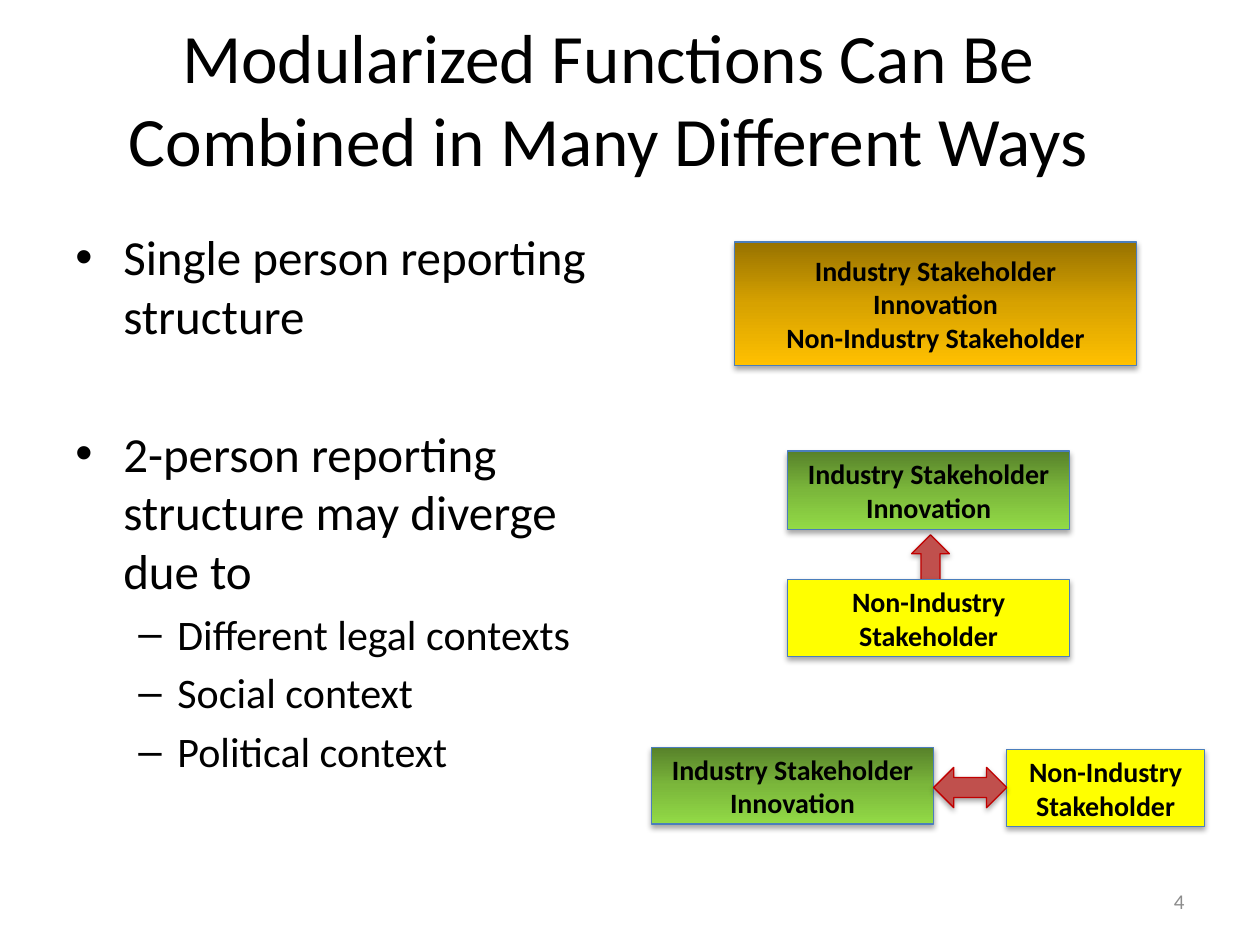
from pptx import Presentation
from pptx.dml.color import RGBColor
from pptx.enum.shapes import MSO_SHAPE as SHAPE
from pptx.enum.text import MSO_ANCHOR as ANCHOR, PP_ALIGN as ALIGN
from pptx.oxml import parse_xml
from pptx.oxml.ns import nsdecls, qn
from pptx.util import Pt

PX = 9144  # 100 px to the inch
FONT = "Calibri"
GOLD = ("977200", "D7A200", "FFC000")
GREEN = ("57812A", "7BB73B", "92DA46")
YELLOW = "FFFF00"
INDUSTRY = "Industry Stakeholder\nInnovation"
NON_INDUSTRY = "Non-Industry Stakeholder"


def color(value):
    return RGBColor.from_string(value)


def emu(*lengths):
    return [n * PX for n in lengths]


def style(p, size, ink="000000", bold=False, align=ALIGN.LEFT):
    p.alignment = align
    for r in p.runs:
        r.font.name, r.font.size, r.font.bold = FONT, Pt(size), bold
        r.font.color.rgb = color(ink)


def add_text(s, box, text, size, ink="000000", align=ALIGN.LEFT, anchor=ANCHOR.MIDDLE):
    tf = s.shapes.add_textbox(*emu(*box)).text_frame
    tf.word_wrap = True
    tf.vertical_anchor = anchor
    tf.text = text
    for p in tf.paragraphs:
        style(p, size, ink, align=align)
    return tf


def set_bullet(p, char, left, hang):
    pPr = p._p.get_or_add_pPr()
    pPr.set("marL", str(left * PX))
    pPr.set("indent", str(-hang * PX))
    pPr.append(parse_xml(f'<a:buFont {nsdecls("a")} typeface="Arial"/>'))
    pPr.append(parse_xml(f'<a:buChar {nsdecls("a")} char="{char}"/>'))


def set_gradient(sp, stops):
    gs = "".join(f'<a:gs pos="{i * 50000}"><a:srgbClr val="{c}"/></a:gs>'
                 for i, c in enumerate(stops))
    sp._element.spPr.find(qn("a:prstGeom")).addnext(parse_xml(
        f'<a:gradFill {nsdecls("a")} rotWithShape="1"><a:gsLst>{gs}</a:gsLst>'
        '<a:lin ang="5400000" scaled="0"/></a:gradFill>'))


def add_block(s, kind, box, fill, line):
    sp = s.shapes.add_shape(kind, *emu(*box))
    if isinstance(fill, tuple):
        set_gradient(sp, fill)
    else:
        sp.fill.solid()
        sp.fill.fore_color.rgb = color(fill)
    sp.line.color.rgb = color(line)
    sp.line.width = Pt(0.75)
    sp.shadow.inherit = False
    sp._element.spPr.find(qn("a:effectLst")).append(parse_xml(
        f'<a:outerShdw {nsdecls("a")} blurRad="40000" dist="23000" dir="5400000" '
        'rotWithShape="0"><a:srgbClr val="000000"><a:alpha val="35000"/>'
        '</a:srgbClr></a:outerShdw>'))
    return sp


def add_role(s, box, text, fill):
    tf = add_block(s, SHAPE.RECTANGLE, box, fill, "4B7EBC").text_frame
    tf.word_wrap = True
    tf.vertical_anchor = ANCHOR.MIDDLE
    tf.text = text
    for p in tf.paragraphs:
        style(p, 16, bold=True, align=ALIGN.CENTER)


def add_arrow(s, box, rotation=0):
    sp = add_block(s, SHAPE.LEFT_RIGHT_ARROW, box, "C0504D", "C00000")
    sp.rotation = rotation


def add_points(s, box):
    # level, space before in points, text
    points = [
        (0, 0, "Single person reporting structure"),
        (0, 45, "2-person reporting structure may diverge due to"),
        (1, 4.8, "Different legal contexts"),
        (1, 4.8, "Social context"),
        (1, 4.8, "Political context"),
    ]
    levels = [("•", 38, 38, 28), ("–", 81, 31, 24)]
    text = "\n".join(point[2] for point in points)
    tf = add_text(s, box, text, 28, anchor=ANCHOR.TOP)
    for p, (level, before, _) in zip(tf.paragraphs, points):
        char, left, hang, size = levels[level]
        p.level = level
        p.space_before = Pt(before)
        set_bullet(p, char, left, hang)
        style(p, size)


def add_stacked_pair(s, x, y):
    add_arrow(s, (x + 87, y + 78, 53, 30), 90)
    add_role(s, (x, y, 224, 62), INDUSTRY, GREEN)
    add_role(s, (x, y + 102, 224, 61), NON_INDUSTRY, YELLOW)


def add_side_pair(s, x, y):
    add_role(s, (x, y, 224, 61), INDUSTRY, GREEN)
    add_role(s, (x + 282, y + 2, 157, 61), NON_INDUSTRY, YELLOW)
    add_arrow(s, (x + 224, y + 16, 58, 32))


def main():
    prs = Presentation()
    prs.slide_width, prs.slide_height = emu(1000, 750)
    s = prs.slides.add_slide(prs.slide_layouts[6])

    # Title, points and slide number
    add_text(s, (33, 15, 900, 125),
             "Modularized Functions Can Be Combined in Many Different Ways",
             39.6, align=ALIGN.CENTER)
    add_points(s, (50, 175, 442, 495))
    add_text(s, (717, 695, 233, 40), "4", 12, "8C8C8C", ALIGN.RIGHT)

    # Reporting structures
    add_role(s, (583, 192, 319, 98), f"{INDUSTRY}\n{NON_INDUSTRY}", GOLD)
    add_stacked_pair(s, 625, 358)
    add_side_pair(s, 517, 593)

    prs.save("out.pptx")


if __name__ == "__main__":
    main()
